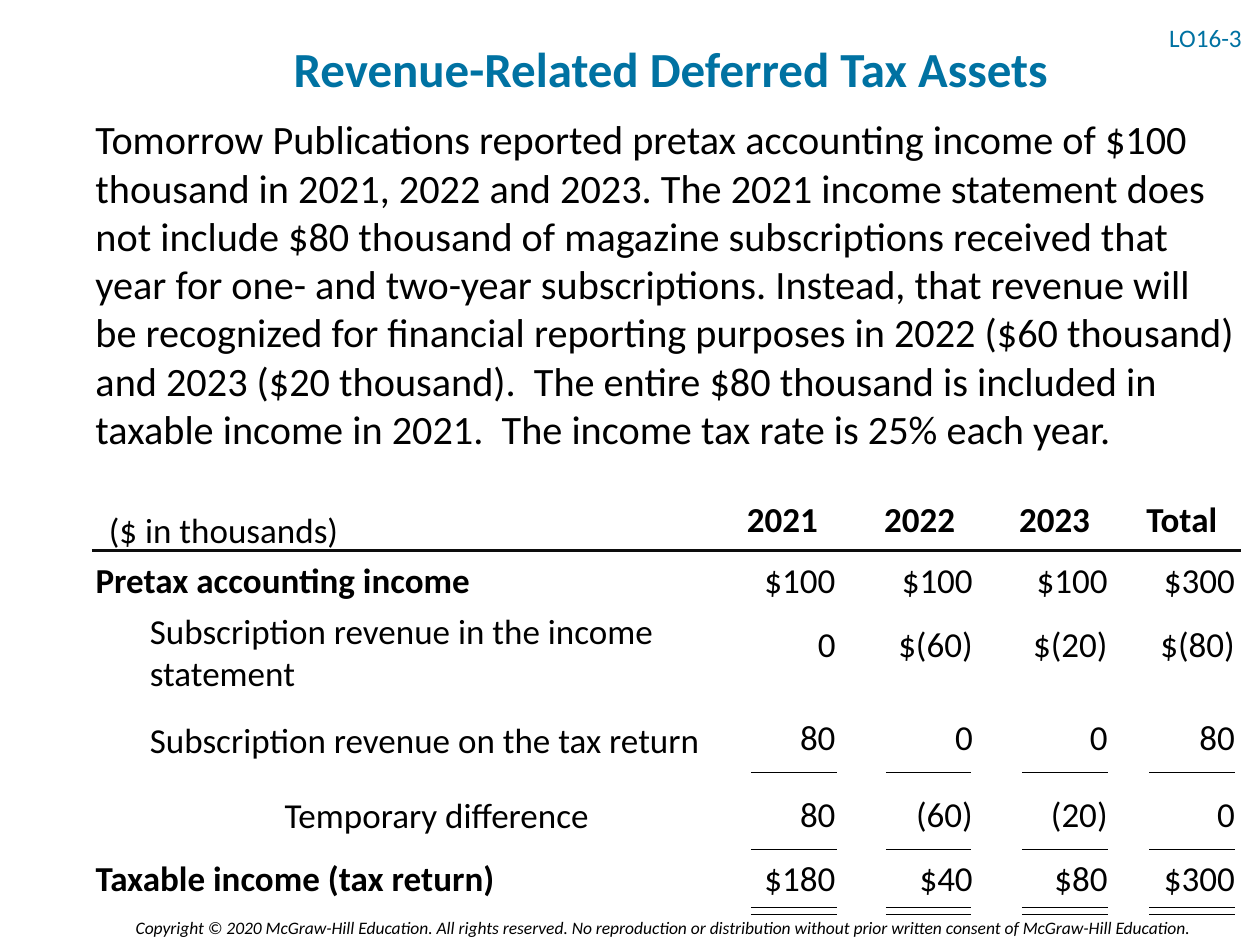
from lxml import etree
from pptx import Presentation
from pptx.dml.color import RGBColor
from pptx.enum import shapes, text
from pptx.oxml import ns
from pptx.util import Inches, Pt

BLACK = RGBColor(0x00, 0x00, 0x00)
INK = RGBColor(0x0D, 0x0D, 0x0D)
BLUE = RGBColor(0x00, 0x72, 0xA2)
FONT = "Calibri"
LEFT, RIGHT, MID = text.PP_ALIGN.LEFT, text.PP_ALIGN.RIGHT, text.PP_ALIGN.CENTER

COLS = [
    ("2021", 5.69, 5.96),
    ("2022", 6.78, 7.03),
    ("2023", 7.85, 8.11),
    ("Total", 8.86, 9.12),
]
ROWS = [
    (4.38, ["$100", "$100", "$100", "$300"]),
    (4.89, ["0", "$(60)", "$(20)", "$(80)"]),
    (5.63, ["80", "0", "0", "80"]),
    (6.24, ["80", "(60)", "(20)", "0"]),
    (6.75, ["$180", "$40", "$80", "$300"]),
]
LABELS = [
    ("Pretax accounting income", 0.66, 4.38, 0.44, True, 0),
    ("Subscription revenue in the income statement", 0.59, 4.79, 0.77, False, 0.5),
    ("Subscription revenue on the tax return", 0.59, 5.65, 0.44, False, 0.5),
    ("Temporary difference", 0.66, 6.25, 0.44, False, 1.5),
    ("Taxable income (tax return)", 0.66, 6.75, 0.44, True, 0),
]
RULES = [6.13, 6.74, 7.2, 7.26]
STORY = (
    "Tomorrow Publications reported pretax accounting income of $100 thousand "
    "in 2021, 2022 and 2023. The 2021 income statement does not include $80 "
    "thousand of magazine subscriptions received that year for one- and two-year "
    "subscriptions. Instead, that revenue will be recognized for financial "
    "reporting purposes in 2022 ($60 thousand) and 2023 ($20 thousand).  The "
    "entire $80 thousand is included in taxable income in 2021.  The income tax "
    "rate is 25% each year."
)
NOTICE = (
    "Copyright © 2020 McGraw-Hill Education. All rights reserved. No reproduction "
    "or distribution without prior written consent of McGraw-Hill Education."
)


def write(frame, words, size, color=BLACK, bold=False, italic=False, align=LEFT):
    frame.word_wrap = True
    par = frame.paragraphs[0]
    par.alignment = align
    run = par.add_run()
    run.text = words
    font = run.font
    font.name, font.size, font.bold, font.italic = FONT, Pt(size), bold, italic
    font.color.rgb = color
    return par


def add_text(slide, words, at, size=20, **style):
    frame = slide.shapes.add_textbox(*map(Inches, at)).text_frame
    frame.auto_size = text.MSO_AUTO_SIZE.NONE
    return write(frame, words, size, **style)


def add_title(slide, words):
    title = slide.shapes.title
    title.left, title.top = Inches(2.23), Inches(0)
    title.width, title.height = Inches(6.65), Inches(1.03)
    frame = title.text_frame
    frame.auto_size = text.MSO_AUTO_SIZE.NONE
    frame.vertical_anchor = text.MSO_ANCHOR.MIDDLE
    write(frame, words, 28, color=BLUE, bold=True).line_spacing = 1.1


def add_tag(slide, words):
    box = slide.shapes.add_textbox(Inches(9.18), Inches(0.13), Inches(0.81), Inches(0.4))
    frame = box.text_frame
    frame.vertical_anchor = text.MSO_ANCHOR.MIDDLE
    write(frame, words, 14.4, color=BLUE).line_spacing = 0.7


def add_rule(slide, left, right, y, color=BLACK, width=0.5):
    rule = slide.shapes.add_connector(
        shapes.MSO_CONNECTOR.STRAIGHT, Inches(left), Inches(y), Inches(right), Inches(y)
    )
    rule.line.color.rgb = color
    rule.line.width = Pt(width)
    etree.SubElement(rule.element.spPr, ns.qn("a:effectLst"))


def add_label(slide, words, left, top, height, bold, indent):
    par = add_text(slide, words, (left, top, 5.25, height), bold=bold)
    props = par._p.get_or_add_pPr()
    props.set("marL", str(Inches(indent)))
    props.set("indent", "0")


def add_grid(slide):
    add_text(slide, "($ in thousands)", (0.66, 3.99, 2.23, 0.44), align=MID)
    add_rule(slide, 0.73, 9.85, 4.37, INK, 1.5)
    for label in LABELS:
        add_label(slide, *label)
    for col, (head, left, start) in enumerate(COLS):
        add_text(slide, head, (left, 3.9, 1.04, 0.44), bold=True, align=MID)
        for top, sums in ROWS:
            add_text(slide, sums[col], (left, top, 1.04, 0.44), align=RIGHT)
        for y in RULES:
            add_rule(slide, start, start + 0.68, y)


def main():
    deck = Presentation()
    deck.slide_width, deck.slide_height = Inches(10), Inches(7.5)
    slide = deck.slides.add_slide(deck.slide_layouts[5])
    add_text(slide, NOTICE, (0.45, 7.23, 9.09, 0.27), 10, italic=True, align=RIGHT)
    add_title(slide, "Revenue-Related Deferred Tax Assets")
    add_tag(slide, "LO16-3")
    add_text(slide, STORY, (0.66, 0.86, 9.27, 2.81), 23)
    add_grid(slide)
    deck.save("out.pptx")


if __name__ == "__main__":
    main()
